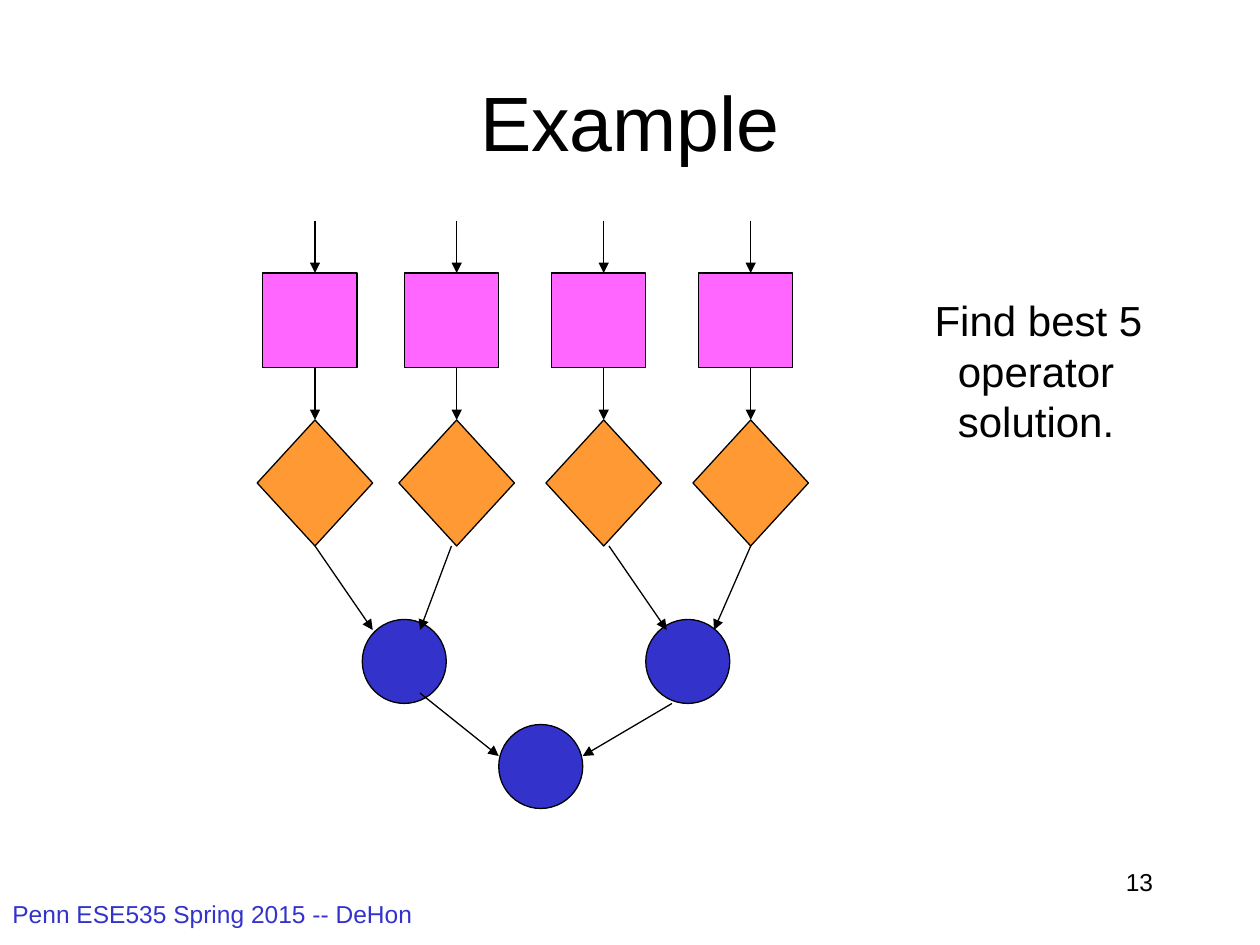
from pptx import Presentation
from pptx.dml.color import RGBColor
from pptx.enum.shapes import MSO_CONNECTOR, MSO_SHAPE
from pptx.enum.text import MSO_ANCHOR, PP_ALIGN
from pptx.oxml.ns import qn
from pptx.util import Pt
from lxml import etree

LINE = MSO_CONNECTOR.STRAIGHT
RECT, DIAMOND, OVAL = MSO_SHAPE.RECTANGLE, MSO_SHAPE.DIAMOND, MSO_SHAPE.OVAL
TOP, MIDDLE = MSO_ANCHOR.TOP, MSO_ANCHOR.MIDDLE
LEFT, CENTER, RIGHT = PP_ALIGN.LEFT, PP_ALIGN.CENTER, PP_ALIGN.RIGHT

COLORS = {"ink": "000000", "pink": "FF66FF", "orange": "FF9933", "blue": "3333CC"}


def color(name):
    return RGBColor.from_string(COLORS[name])


def add_text(slide, text, box, size=14, ink="ink", align=LEFT, anchor=TOP,
             wrap=True, indent=0):
    """Place text; lines after the first are indented."""
    frame = slide.shapes.add_textbox(*map(Pt, box)).text_frame
    frame.word_wrap = wrap
    frame.vertical_anchor = anchor
    for i, line in enumerate(text.split("\n")):
        par = frame.paragraphs[0] if i == 0 else frame.add_paragraph()
        if i and indent:
            par._p.get_or_add_pPr().set("marL", str(Pt(indent)))
        par.alignment = align
        run = par.add_run()
        run.text = line
        run.font.name = "Arial"
        run.font.size = Pt(size)
        run.font.color.rgb = color(ink)


def add_node(slide, kind, box, fill):
    node = slide.shapes.add_shape(kind, *map(Pt, box))
    node.shadow.inherit = False
    node.fill.solid()
    node.fill.fore_color.rgb = color(fill)
    node.line.color.rgb = color("ink")
    node.line.width = Pt(0.75)
    return node


def add_arrow(slide, x1, y1, x2, y2):
    arrow = slide.shapes.add_connector(LINE, Pt(x1), Pt(y1), Pt(x2), Pt(y2))
    arrow.line.color.rgb = color("ink")
    arrow.line.width = Pt(0.75)
    etree.SubElement(arrow.line._get_or_add_ln(), qn("a:tailEnd"), type="triangle")
    etree.SubElement(arrow._element.spPr, qn("a:effectLst"))
    return arrow


def add_lane(slide, x, y, w, h):
    """Input arrow, square, arrow and diamond, stacked in one column."""
    gap, side, tall = 30, 54, 72
    mid, base = x + w / 2, y + h - tall
    add_node(slide, RECT, (x + 3, y + gap, side, side), "pink")
    gem = add_node(slide, DIAMOND, (x, base, w, tall), "orange")
    add_arrow(slide, mid, base - gap, mid, base).end_connect(gem, 0)
    add_arrow(slide, mid, y, mid, y + gap)


def add_tree(slide, x, y, w, h):
    """Two circles that feed a third, below the lanes."""
    size = 48
    for dx, dy in ((60, 42), (222, 42), (138, h - size)):
        add_node(slide, OVAL, (x + dx, y + dy, size, size), "blue")
    links = (
        (33, 0, 66, 48), (111, 0, 93, 48),           # left pair of lanes
        (201, 0, 234, 48), (w - 33, 0, 261, 48),     # right pair of lanes
        (93, 84, 138, 120), (237, 90, 186, 120),     # into the last circle
    )
    for x1, y1, x2, y2 in links:
        add_arrow(slide, x + x1, y + y1, x + x2, y + y2)


def add_graph(slide, x, y, w, h):
    lane_w, lane_h = 66, 186
    add_tree(slide, x, y + lane_h, w, h - lane_h)
    for dx in (0, 81, 165, w - lane_w):
        add_lane(slide, x + dx, y, lane_w, lane_h)


def main():
    deck = Presentation()
    deck.slide_width, deck.slide_height = Pt(720), Pt(540)
    slide = deck.slides.add_slide(deck.slide_layouts[6])

    # Footer and page number
    add_text(slide, "Penn ESE535 Spring 2015 -- DeHon", (0, 510, 276, 30), ink="blue")
    add_text(slide, "13", (516, 492, 150, 36), align=RIGHT)

    # Title
    add_text(slide, "Example", (54, 24, 612, 90), size=44, align=CENTER, anchor=MIDDLE)

    # Graph and task
    add_graph(slide, 147, 126, 315, 336)
    add_text(slide, "Find best 5\noperator\nsolution.", (527, 165, 133, 94),
             size=24, wrap=False, indent=13.3)

    deck.save("out.pptx")


if __name__ == "__main__":
    main()
